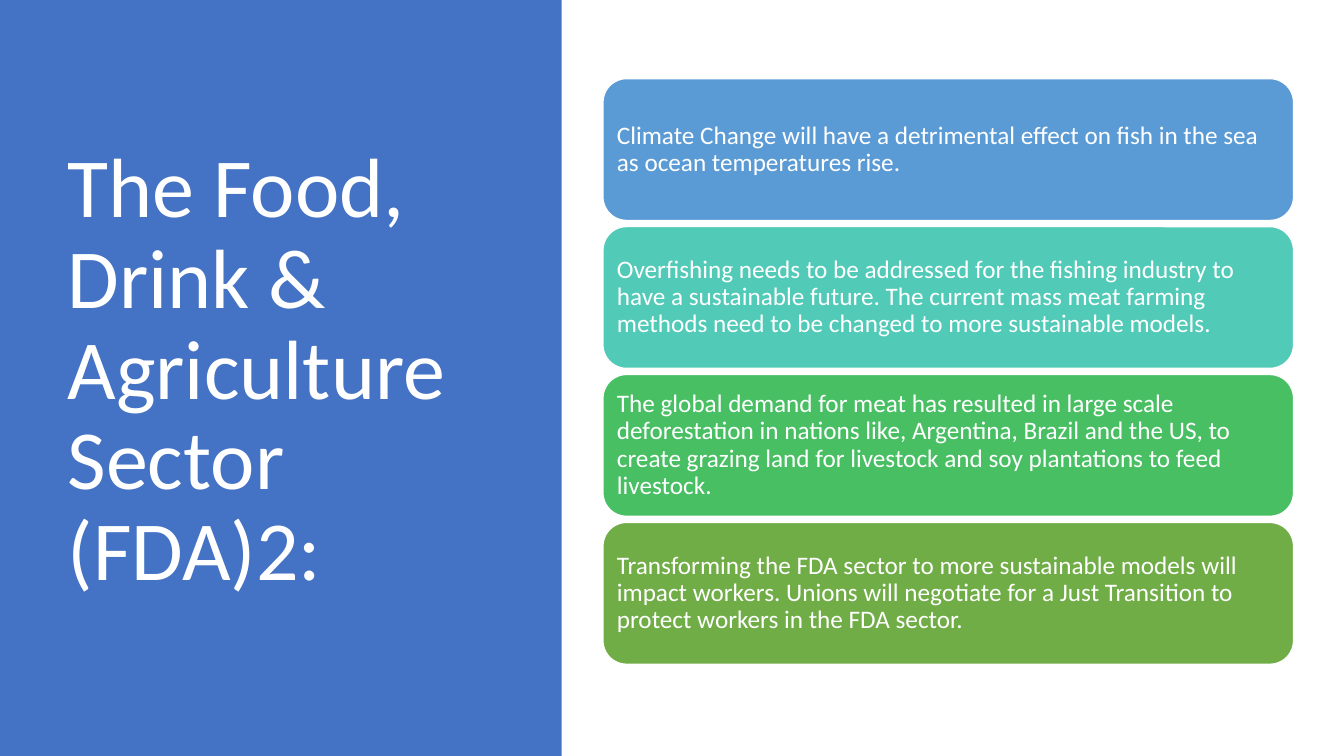
from pptx import Presentation
from pptx.dml.color import RGBColor
from pptx.enum.shapes import MSO_SHAPE as Shape
from pptx.enum.text import MSO_ANCHOR as Anchor, PP_ALIGN as Align
from pptx.util import Inches, Pt

SLIDE_W, SLIDE_H = 13.33, 7.5
FONT, WHITE = "Calibri", "FFFFFF"
HEADING = "The Food, Drink & Agriculture Sector (FDA)2:"
POINTS = [
    ("5B9BD5", "Climate Change will have a detrimental effect on fish in the sea "
               "as ocean temperatures rise."),
    ("52CAB8", "Overfishing needs to be addressed for the fishing industry to have "
               "a sustainable future. The current mass meat farming methods need "
               "to be changed to more sustainable models."),
    ("49BF64", "The global demand for meat has resulted in large scale deforestation "
               "in nations like, Argentina, Brazil and the US, to create grazing land "
               "for livestock and soy plantations to feed livestock."),
    ("70AD47", "Transforming the FDA sector to more sustainable models will impact "
               "workers. Unions will negotiate for a Just Transition to protect "
               "workers in the FDA sector."),
]


def color(hex_string):
    return RGBColor.from_string(hex_string)


def add_block(slide, preset, box, fill):
    block = slide.shapes.add_shape(preset, *map(Inches, box))
    block.shadow.inherit = False
    block.fill.solid()
    block.fill.fore_color.rgb = color(fill)
    block.line.fill.background()
    return block


def write(frame, text, size):
    frame.text = text
    frame.word_wrap = True
    frame.vertical_anchor = Anchor.MIDDLE
    paragraph = frame.paragraphs[0]
    paragraph.alignment = Align.LEFT
    paragraph.line_spacing = 0.9
    font = paragraph.runs[0].font
    font.name, font.size = FONT, Pt(size)
    font.color.rgb = color(WHITE)


def heading_panel(slide, box):
    """Coloured panel with the slide title on top."""
    left, top, width, height = box
    panel = add_block(slide, Shape.RECTANGLE, box, "4472C4")
    heading = slide.shapes.title
    heading.element.addprevious(panel.element)  # keep the panel behind the title
    heading.left, heading.top = Inches(left + 0.57), Inches(top + 0.68)
    heading.width, heading.height = Inches(width - 1.41), Inches(height - 1.48)
    write(heading.text_frame, HEADING, 60)


def point_cards(slide, box, gap=0.06):
    """Equal rounded cards stacked down the box."""
    left, top, width, height = box
    pitch = (height + gap) / len(POINTS)
    for row, (fill, point) in enumerate(POINTS):
        card_box = (left, top + row * pitch, width, pitch - gap)
        card = add_block(slide, Shape.ROUNDED_RECTANGLE, card_box, fill)
        card.line.color.rgb = color(WHITE)
        card.line.width = Pt(1)
        frame = card.text_frame
        frame.margin_left = frame.margin_right = Inches(0.07)
        frame.margin_top = frame.margin_bottom = Inches(0.07)
        write(frame, point, 18)


def main():
    deck = Presentation()
    deck.slide_width, deck.slide_height = Inches(SLIDE_W), Inches(SLIDE_H)
    slide = deck.slides.add_slide(deck.slide_layouts[5])  # title only
    heading_panel(slide, (0, 0, 5.57, SLIDE_H))
    point_cards(slide, (5.98, 0.78, 6.85, 5.81))
    deck.save("out.pptx")


if __name__ == "__main__":
    main()
